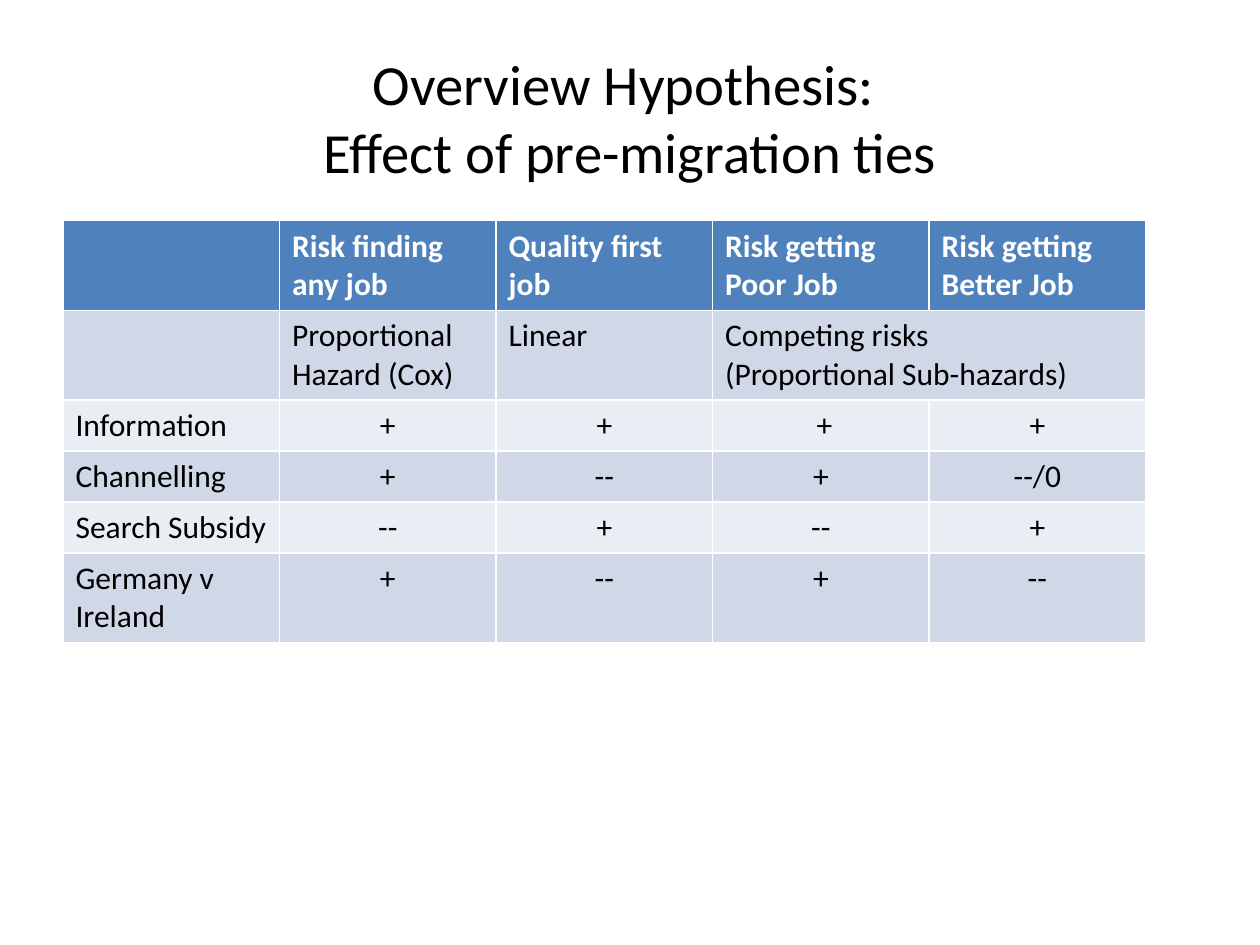
from pptx import Presentation
from pptx.dml.color import RGBColor
from pptx.enum.text import MSO_ANCHOR, MSO_AUTO_SIZE, PP_ALIGN
from pptx.util import Cm, Pt

LEFT, CENTER = PP_ALIGN.LEFT, PP_ALIGN.CENTER
MIDDLE, FIXED = MSO_ANCHOR.MIDDLE, MSO_AUTO_SIZE.NONE

# Content: \v breaks a line, \n starts a paragraph
TITLE = "Overview Hypothesis: \vEffect of pre-migration ties"
ROWS = [
    ["", "Risk finding any job", "Quality first job",
     "Risk getting\nPoor Job", "Risk getting\nBetter Job"],
    ["", "Proportional Hazard (Cox)", "Linear",
     "Competing risks\n(Proportional Sub-hazards)", ""],
    ["Information", "+", "+", " +", "+"],
    ["Channelling", "+", "--", "+", "--/0"],
    ["Search Subsidy", "--", "+", "--", "+"],
    ["Germany v Ireland", "+", "--", "+", "--"],
]
COLORS = {"head": "4F81BD", "dark": "D0D8E8", "light": "E9EDF4",
          "white": "FFFFFF", "black": "000000"}
FONTS = {
    "title": {"name": "Calibri", "size": Pt(32.4), "bold": False},
    "head": {"name": "Calibri", "size": Pt(18), "bold": True},
    "body": {"name": "Calibri", "size": Pt(18), "bold": False},
}
SIDE, TOP = Cm(1.27), Cm(4.45)
COL, ROW = Cm(4.365), Cm(1.03)


def style(frame, kind, color, align):
    for para in frame.paragraphs:
        para.alignment = align
        for item in [para, *para.runs]:
            for key, value in FONTS[kind].items():
                setattr(item.font, key, value)
            item.font.color.rgb = RGBColor.from_string(COLORS[color])


deck = Presentation()
deck.slide_width, deck.slide_height = Cm(25.4), Cm(19.05)
slide = deck.slides.add_slide(deck.slide_layouts[5])

# Title
title = slide.shapes.title
title.left, title.top = SIDE, Cm(0.76)
title.width, title.height = Cm(22.86), Cm(3.18)
frame = title.text_frame
frame.text = TITLE
frame.auto_size, frame.vertical_anchor = FIXED, MIDDLE
style(frame, "title", "black", CENTER)

# Table: header, model row, then one row per hypothesis
count, wide = len(ROWS), len(ROWS[0])
table = slide.shapes.add_table(
    count, wide, SIDE, TOP, COL * wide, ROW * count).table
for col in table.columns:
    col.width = COL
for r, texts in enumerate(ROWS):
    table.rows[r].height = ROW
    kind = "body" if r else "head"
    color = "black" if r else "white"
    fill = "head" if r == 0 else "dark" if r % 2 else "light"
    for c, text in enumerate(texts):
        cell = table.cell(r, c)
        cell.text = text
        cell.fill.solid()
        cell.fill.fore_color.rgb = RGBColor.from_string(COLORS[fill])
        style(cell.text_frame, kind, color,
              CENTER if r > 1 and c else LEFT)
table.cell(1, 3).merge(table.cell(1, 4))

deck.save("out.pptx")
